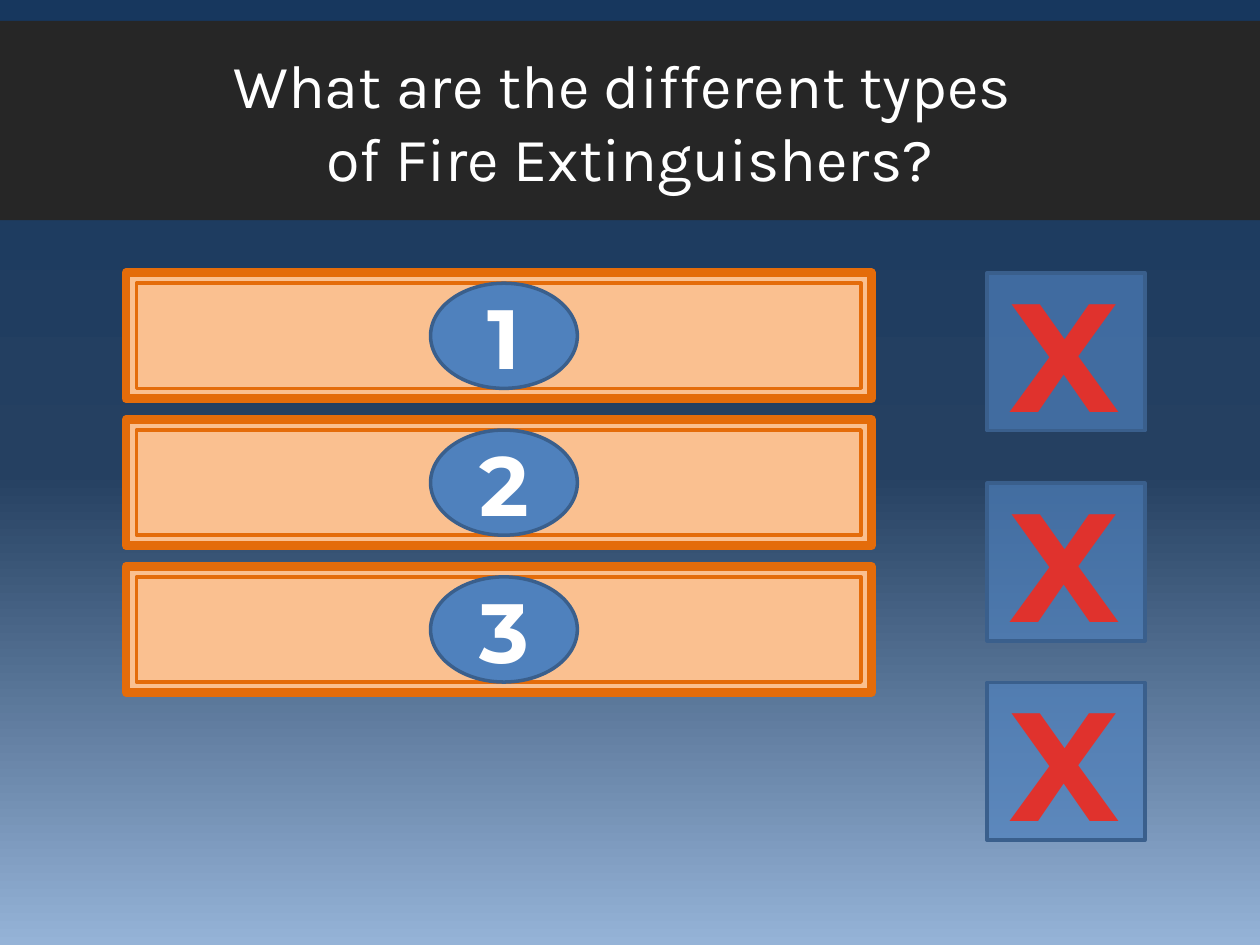
import copy

import lxml.etree
import pptx
import pptx.dml.color
import pptx.enum.dml
import pptx.enum.shapes
import pptx.enum.text
import pptx.oxml.ns
import pptx.util

Cm = pptx.util.Cm
RGBColor = pptx.dml.color.RGBColor
SHAPES = pptx.enum.shapes.MSO_SHAPE
qn = pptx.oxml.ns.qn

NAVY = RGBColor(0x17, 0x37, 0x5E)
DEEP_BLUE = RGBColor(0x25, 0x40, 0x61)
PALE_BLUE = RGBColor(0x95, 0xB3, 0xD7)
CHARCOAL = RGBColor(0x26, 0x26, 0x26)
PEACH = RGBColor(0xFA, 0xC0, 0x90)
ORANGE = RGBColor(0xE4, 0x6C, 0x0A)
BLUE = RGBColor(0x4F, 0x81, 0xBD)
BLUE_EDGE = RGBColor(0x3A, 0x5F, 0x8C)
RED = RGBColor(0xE0, 0x32, 0x2D)
DARK_RED = RGBColor(0xA2, 0x20, 0x1C)
WHITE = RGBColor(0xFF, 0xFF, 0xFF)

presentation = pptx.Presentation()
presentation.slide_width = Cm(25.4)
presentation.slide_height = Cm(19.05)
slide = presentation.slides.add_slide(presentation.slide_layouts[6])


def add_box(kind, left, top, width, height, color, edge=None, weight=2):
    shape = slide.shapes.add_shape(kind, Cm(left), Cm(top), Cm(width), Cm(height))
    shape.shadow.inherit = False
    shape.fill.solid()
    shape.fill.fore_color.rgb = color
    if edge is None:
        shape.line.fill.background()
    else:
        shape.line.color.rgb = edge
        shape.line.width = pptx.util.Pt(weight)
    return shape


def set_gradient(fill, parent, stops):
    """Downward gradient; parent is the XML element that holds the fill."""
    fill.gradient()
    fill.gradient_angle = 270
    stop_list = parent.find(qn("a:gradFill")).find(qn("a:gsLst"))
    while len(stop_list) < len(stops):
        stop_list.append(copy.deepcopy(stop_list[0]))
    for stop, (position, color) in zip(fill.gradient_stops, stops):
        stop.position = position
        stop.color.rgb = color


# Backdrop
backdrop = add_box(SHAPES.RECTANGLE, 0, 0, 25.4, 19.05, NAVY)
set_gradient(backdrop.fill, backdrop._element.spPr,
             [(0, NAVY), (0.5, DEEP_BLUE), (1, PALE_BLUE)])

# Title band
band = add_box(SHAPES.RECTANGLE, 0, 0.42, 25.4, 4.02, CHARCOAL)
frame = band.text_frame
frame.vertical_anchor = pptx.enum.text.MSO_ANCHOR.MIDDLE
for index, line in enumerate(["What are the different types ", "of Fire Extinguishers?"]):
    paragraph = frame.add_paragraph() if index else frame.paragraphs[0]
    paragraph.alignment = pptx.enum.text.PP_ALIGN.CENTER
    run = paragraph.add_run()
    run.text = line
    run.font.name = "Karla"
    run.font.size = pptx.util.Pt(35)
    run.font.color.rgb = WHITE

# Numbered answer bars
for index in range(3):
    top = 5.5 + index * 2.96
    add_box(SHAPES.RECTANGLE, 2.54, top, 15.03, 2.54, PEACH, ORANGE, 5)
    add_box(SHAPES.RECTANGLE, 2.75, top + 0.21, 14.61, 2.12, PEACH, ORANGE)
    badge = add_box(SHAPES.OVAL, 8.68, top + 0.21, 2.96, 2.12, BLUE, BLUE_EDGE)
    badge.text_frame.vertical_anchor = pptx.enum.text.MSO_ANCHOR.MIDDLE
    paragraph = badge.text_frame.paragraphs[0]
    paragraph.alignment = pptx.enum.text.PP_ALIGN.CENTER
    run = paragraph.add_run()
    run.text = str(index + 1)
    run.font.name = "Montserrat"
    run.font.size = pptx.util.Pt(48)
    run.font.bold = True
    run.font.color.rgb = WHITE

# Strike boxes
for top in (5.5, 9.74, 13.76):
    square = add_box(SHAPES.RECTANGLE, 19.9, top, 3.18, 3.18, BLUE, BLUE_EDGE)
    color = square._element.spPr.find(qn("a:solidFill"))[0]
    lxml.etree.SubElement(color, qn("a:alpha")).set("val", "69000")

    strike = slide.shapes.add_textbox(Cm(20.11), Cm(top - 0.42), Cm(2.69), Cm(4.02))
    frame = strike.text_frame
    frame.word_wrap = False
    frame.auto_size = pptx.enum.text.MSO_AUTO_SIZE.SHAPE_TO_FIT_TEXT
    paragraph = frame.paragraphs[0]
    paragraph.alignment = pptx.enum.text.PP_ALIGN.CENTER
    run = paragraph.add_run()
    run.text = "X"
    run.font.name = "Montserrat"
    run.font.size = pptx.util.Pt(88)
    run.font.bold = True
    properties = run._r.get_or_add_rPr()
    properties.set("spc", "50")
    set_gradient(run.font.fill, properties, [(0.25, RED), (1, DARK_RED)])

presentation.save("out.pptx")
